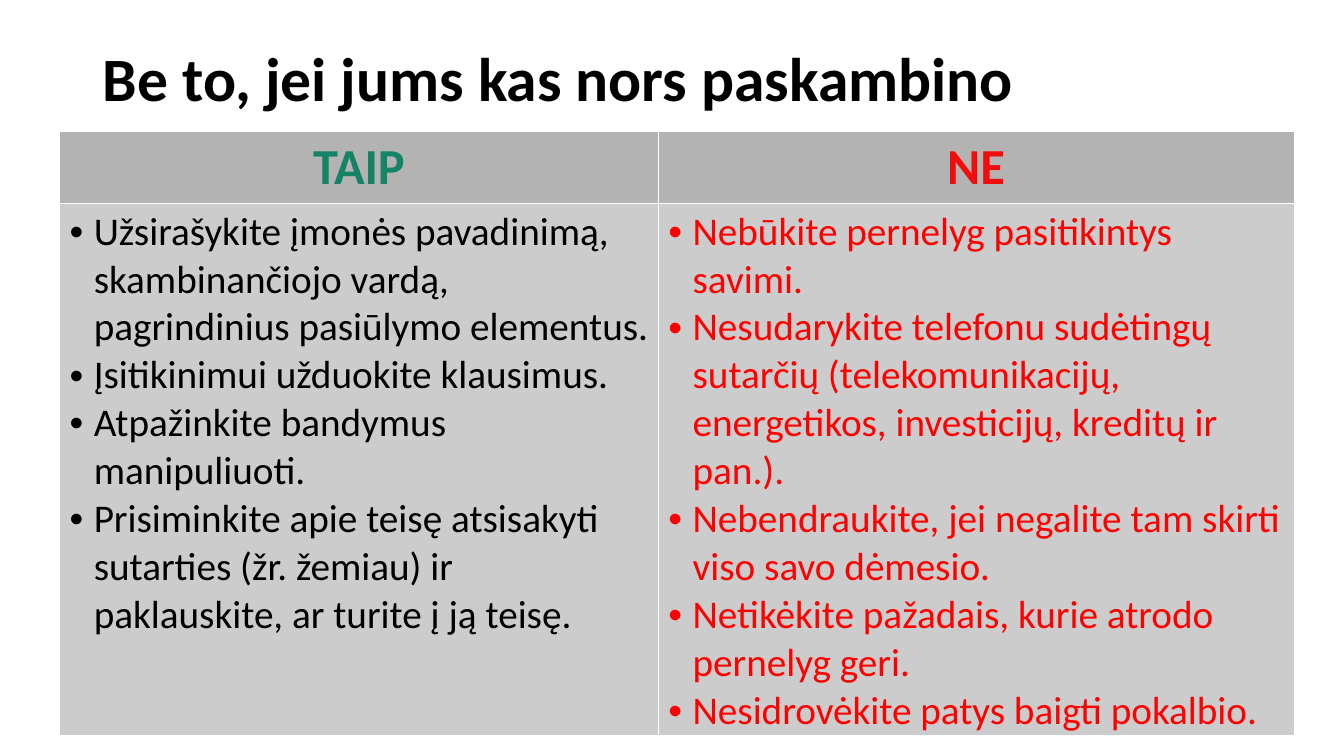
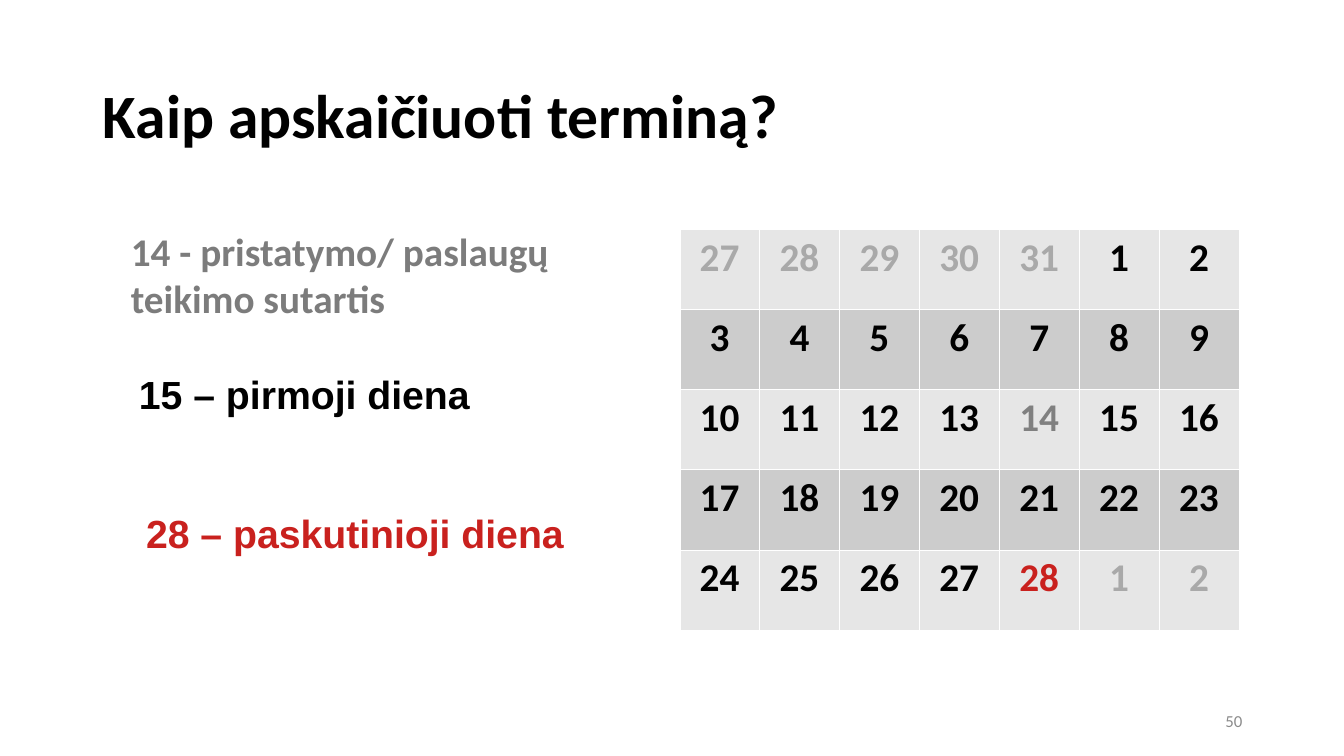
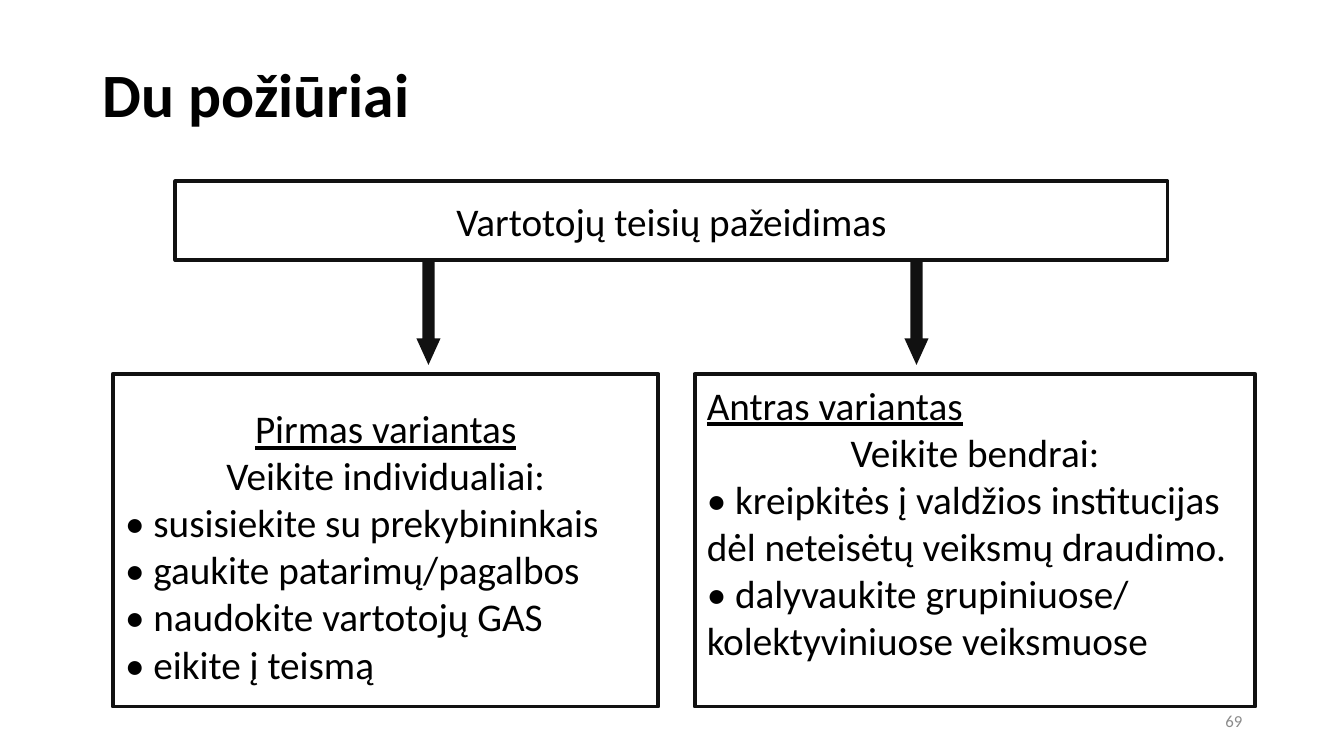
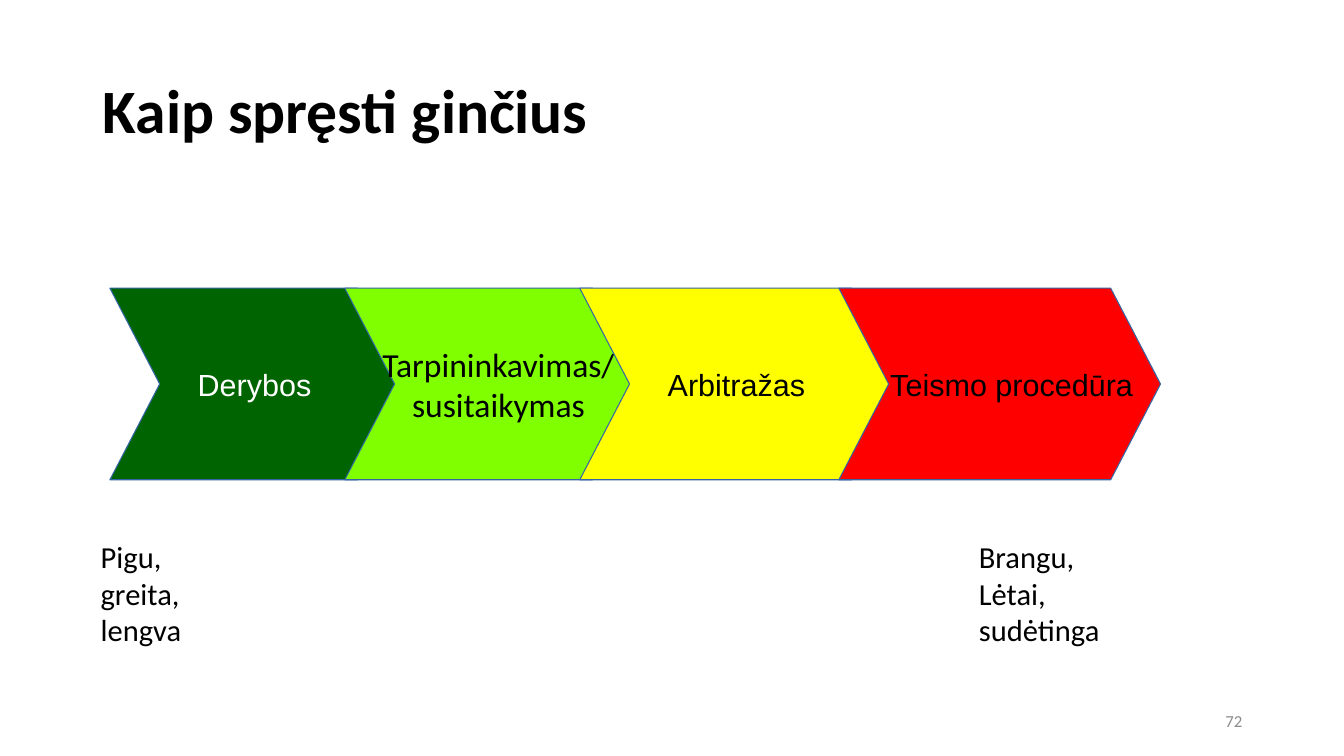
import dataclasses

import pptx
import pptx.dml.color
import pptx.enum.shapes
import pptx.enum.text
import pptx.oxml.ns
import pptx.util
from lxml import etree

PX = 9144  # EMU; 100 px to the inch
ALIGN = pptx.enum.text.PP_ALIGN
ANCHOR = pptx.enum.text.MSO_ANCHOR
SHAPE = pptx.enum.shapes.MSO_SHAPE


@dataclasses.dataclass(frozen=True)
class Theme:
    font: str = "Calibri"
    label_font: str = "Arial"
    title_size: float = 44
    header_size: float = 36
    body_size: float = 28
    step_size: float = 24
    small_size: float = 21.8
    number_size: float = 12
    black: str = "000000"
    white: str = "FFFFFF"
    ink: str = "111111"
    number: str = "8B8B8B"
    yes: str = "158466"
    no: str = "F10D0C"
    warning: str = "FF0000"
    deadline: str = "C9211E"
    contract: str = "7C7C7C"
    contract_day: str = "808080"
    other_month: str = "A9A9A9"
    header_fill: str = "B3B3B3"
    dark_fill: str = "CCCCCC"
    light_fill: str = "E6E6E6"
    step_line: str = "3465A4"
    dark_green: str = "006400"
    light_green: str = "7FFF00"
    yellow: str = "FFFF00"


THEME = Theme()


def px(*lengths):
    return [pptx.util.Emu(length * PX) for length in lengths]


def rgb(color):
    return pptx.dml.color.RGBColor.from_string(color)


def set_text(frame, lines, size, color=THEME.black, bold=False, font=THEME.font, align=ALIGN.LEFT):
    """Fill the frame with one paragraph a line and return the paragraphs."""
    for index, line in enumerate(lines):
        paragraph = frame.add_paragraph() if index else frame.paragraphs[0]
        paragraph.text = line
        paragraph.alignment = align
        paragraph.font.name = font
        paragraph.font.size = pptx.util.Pt(size)
        paragraph.font.bold = bold
        paragraph.font.color.rgb = rgb(color)
    return frame.paragraphs


def set_margins(frame, left, top, right, bottom):
    frame.margin_left, frame.margin_top, frame.margin_right, frame.margin_bottom = px(left, top, right, bottom)


def add_text(slide, box, lines, size, **style):
    frame = slide.shapes.add_textbox(*px(*box)).text_frame
    frame.word_wrap = True
    set_text(frame, lines, size, **style)
    return frame


def add_shape(slide, preset, box, fill=None, line=None, line_width=0):
    shape = slide.shapes.add_shape(preset, *px(*box))
    shape.shadow.inherit = False
    if fill:
        shape.fill.solid()
        shape.fill.fore_color.rgb = rgb(fill)
    else:
        shape.fill.background()
    if line:
        shape.line.color.rgb = rgb(line)
        shape.line.width = pptx.util.Pt(line_width)
    else:
        shape.line.fill.background()
    return shape


def add_slide(presentation, title, top, height, number=None, line_spacing=1.0):
    """Add a slide with its title and, where it shows, its number."""
    slide = presentation.slides.add_slide(presentation.slide_layouts[5])
    shape = slide.shapes.title
    shape.left, shape.top, shape.width, shape.height = px(92, top, 1150, height)
    frame = shape.text_frame
    frame.auto_size = pptx.enum.text.MSO_AUTO_SIZE.NONE
    frame.vertical_anchor = ANCHOR.MIDDLE
    set_text(frame, [title], THEME.title_size, bold=True)[0].line_spacing = line_spacing
    if number:
        frame = add_text(slide, (942, 695, 300, 40), [str(number)], THEME.number_size,
                         color=THEME.number, align=ALIGN.RIGHT)
        frame.vertical_anchor = ANCHOR.MIDDLE
    return slide


def format_cell(cell, fill):
    """Give the cell thin white borders and a plain fill."""
    properties = cell._tc.get_or_add_tcPr()
    for side in ("a:lnL", "a:lnR", "a:lnT", "a:lnB"):
        border = etree.SubElement(properties, pptx.oxml.ns.qn(side), w="762")
        solid = etree.SubElement(border, pptx.oxml.ns.qn("a:solidFill"))
        etree.SubElement(solid, pptx.oxml.ns.qn("a:srgbClr"), val=THEME.white)
    cell.fill.solid()
    cell.fill.fore_color.rgb = rgb(fill)


def add_bullet(paragraph, indent):
    properties = paragraph._p.get_or_add_pPr()
    properties.set("marL", str(indent * PX))
    properties.set("indent", str(-indent * PX))
    run_defaults = properties.find(pptx.oxml.ns.qn("a:defRPr"))
    run_defaults.addprevious(etree.Element(pptx.oxml.ns.qn("a:buFont"), typeface=THEME.label_font))
    run_defaults.addprevious(etree.Element(pptx.oxml.ns.qn("a:buChar"), char="•"))


def add_advice_table(slide, box, columns, widths, header_height):
    """Add one column for each (heading, heading colour, text colour, lines)."""
    table = slide.shapes.add_table(2, len(columns), *px(*box)).table
    table.rows[0].height, table.rows[1].height = px(header_height, box[3] - header_height)
    for index, (heading, heading_color, color, lines) in enumerate(columns):
        table.columns[index].width = px(widths[index])[0]
        header, body = table.cell(0, index), table.cell(1, index)
        format_cell(header, THEME.header_fill)
        format_cell(body, THEME.dark_fill)
        body.margin_bottom = 0
        set_text(header.text_frame, [heading], THEME.header_size, heading_color, bold=True, align=ALIGN.CENTER)
        for paragraph in set_text(body.text_frame, lines, THEME.body_size, color):
            add_bullet(paragraph, 24)


def add_calendar(slide, box):
    before, month, after = range(27, 32), range(1, 29), range(1, 3)
    days = [(day, THEME.other_month) for day in before]
    special = {14: THEME.contract_day, 28: THEME.deadline}
    days += [(day, special.get(day, THEME.black)) for day in month]
    days += [(day, THEME.other_month) for day in after]
    table = slide.shapes.add_table(len(days) // 7, 7, *px(*box)).table
    for index, (day, color) in enumerate(days):
        row, column = divmod(index, 7)
        cell = table.cell(row, column)
        format_cell(cell, THEME.dark_fill if row % 2 else THEME.light_fill)
        set_text(cell.text_frame, [str(day)], THEME.body_size, color, bold=True, align=ALIGN.CENTER)


def add_framed_text(slide, box, lines, anchor=ANCHOR.TOP):
    shape = add_shape(slide, SHAPE.RECTANGLE, box, line=THEME.ink, line_width=2.83)
    frame = shape.text_frame
    frame.word_wrap = True
    frame.vertical_anchor = anchor
    set_margins(frame, 12, 7, 12, 7)
    return set_text(frame, lines, THEME.body_size)


def add_option(slide, box, heading, action, steps):
    """Add a framed option and return its heading paragraph."""
    paragraphs = add_framed_text(slide, box, [heading, action, *(f"• {step}" for step in steps)])
    paragraphs[0].font.underline = True
    paragraphs[1].alignment = ALIGN.CENTER
    return paragraphs[0]


def add_down_arrow(slide, box):
    arrow = add_shape(slide, SHAPE.DOWN_ARROW, box, fill=THEME.ink)
    arrow.adjustments[0] = 0.5
    arrow.adjustments[1] = 1.1


def add_step(slide, box, fill, lines, nudge, **style):
    """Add a chevron whose centred text sits nudge px right of the middle."""
    chevron = add_shape(slide, SHAPE.CHEVRON, box, fill=fill, line=THEME.step_line)
    chevron.adjustments[0] = 0.26
    frame = chevron.text_frame
    frame.word_wrap = False
    frame.vertical_anchor = ANCHOR.MIDDLE
    set_margins(frame, max(0, 2 * nudge), 5, max(0, -2 * nudge), 5)
    set_text(frame, lines, align=ALIGN.CENTER, **style)


def build_call_slide(presentation):
    slide = add_slide(presentation, "Be to, jei jums kas nors paskambino", 4, 145)
    columns = [
        ("TAIP", THEME.yes, THEME.black, [
            "Užsirašykite įmonės pavadinimą, skambinančiojo vardą, pagrindinius pasiūlymo elementus.",
            "Įsitikinimui užduokite klausimus.",
            "Atpažinkite bandymus manipuliuoti.",
            "Prisiminkite apie teisę atsisakyti sutarties (žr. žemiau) ir paklauskite, ar turite į ją teisę.",
        ]),
        ("NE", THEME.no, THEME.warning, [
            "Nebūkite pernelyg pasitikintys savimi.",
            "Nesudarykite telefonu sudėtingų sutarčių (telekomunikacijų, energetikos, investicijų, "
            "kreditų ir pan.).",
            "Nebendraukite, jei negalite tam skirti viso savo dėmesio.",
            "Netikėkite pažadais, kurie atrodo pernelyg geri.",
            "Nesidrovėkite patys baigti pokalbio.",
        ]),
    ]
    add_advice_table(slide, (59, 130, 1224, 592), columns, (594, 630), 70)


def build_deadline_slide(presentation):
    slide = add_slide(presentation, "Kaip apskaičiuoti terminą?", 40, 145, 50)
    add_text(slide, (120, 221, 508, 104), ["14 - pristatymo/ paslaugų teikimo sutartis"],
             THEME.body_size, color=THEME.contract, bold=True)
    add_calendar(slide, (674, 227, 555, 398))
    for box, text, color in (
        ((128, 362, 443, 57), "15 – pirmoji diena", THEME.black),
        ((135, 500, 435, 57), "28 – paskutinioji diena", THEME.deadline),
    ):
        add_text(slide, box, [text], THEME.body_size, color=color, bold=True, font=THEME.label_font)


def build_options_slide(presentation):
    slide = add_slide(presentation, "Du požiūriai", 0, 185, 69)
    violation = add_framed_text(slide, (174, 180, 984, 78), ["Vartotojų teisių pažeidimas"], ANCHOR.MIDDLE)
    violation[0].alignment = ALIGN.CENTER
    heading = add_option(slide, (112, 371, 541, 330), "Pirmas variantas", "Veikite individualiai:", [
        "susisiekite su prekybininkais",
        "gaukite patarimų/pagalbos",
        "naudokite vartotojų GAS",
        "eikite į teismą",
    ])
    heading.alignment = ALIGN.CENTER
    heading.line_spacing = 1.5
    add_option(slide, (689, 371, 556, 330), "Antras variantas", "Veikite bendrai:", [
        "kreipkitės į valdžios institucijas dėl neteisėtų veiksmų draudimo.",
        "dalyvaukite grupiniuose/ kolektyviniuose veiksmuose",
    ])
    for left in (413, 897):
        add_down_arrow(slide, (left, 260, 24, 102))


def build_disputes_slide(presentation):
    slide = add_slide(presentation, "Kaip spręsti ginčius", 40, 145, 72, line_spacing=0.9)
    label = dict(size=THEME.small_size, font=THEME.label_font)
    steps = [
        (295, THEME.dark_green, ["Derybos"], -4, dict(label, color=THEME.white)),
        (295, THEME.light_green, ["Tarpininkavimas/", "susitaikymas"], 5, dict(size=THEME.step_size)),
        (319, THEME.yellow, ["Arbitražas"], -4, label),
        (319, THEME.warning, ["Teismo procedūra"], 12, label),
    ]
    left, overlap = 109, 62
    for width, fill, lines, nudge, style in steps:
        add_step(slide, (left, 286, width, 190), fill, lines, nudge, **style)
        left += width - overlap
    add_text(slide, (90, 529, 157, 116), ["Pigu,", "greita,", "lengva"], THEME.small_size)
    add_text(slide, (961, 529, 189, 116), ["Brangu,", "Lėtai,", "sudėtinga"], THEME.small_size)


def main():
    presentation = pptx.Presentation()
    presentation.slide_width, presentation.slide_height = px(1333, 750)
    build_call_slide(presentation)
    build_deadline_slide(presentation)
    build_options_slide(presentation)
    build_disputes_slide(presentation)
    presentation.save("out.pptx")


if __name__ == "__main__":
    main()
